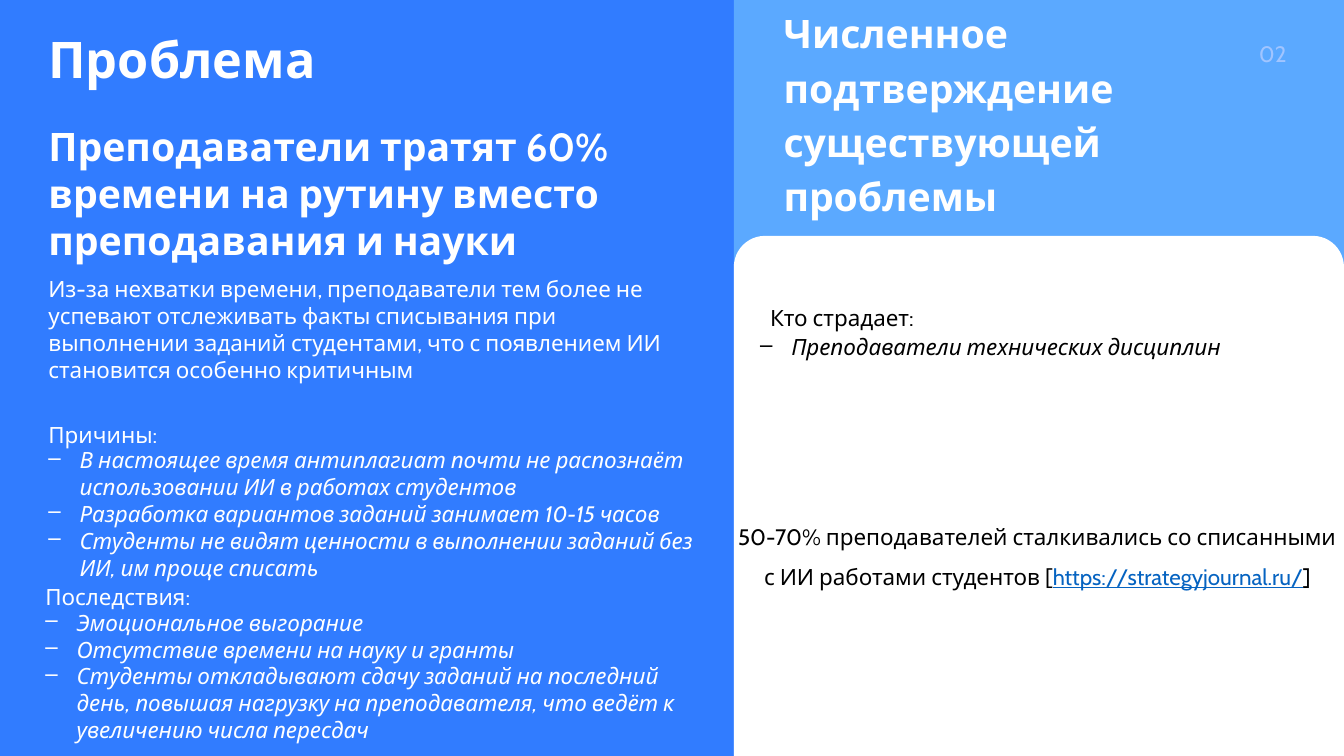
import pptx
import pptx.util
import pptx.dml.color
import pptx.enum.shapes
import pptx.enum.text
import pptx.oxml
import pptx.oxml.ns

WIDE, HIGH = pptx.util.Inches(13.33), pptx.util.Inches(7.5)
WHITE, BLACK, BLUE, SKY = "FFFFFF", "000000", "317CFF", "5BA9FF"
PALE, LINK = "A1C5FF", "0563C1"
LEFT, LOW, SPLIT, SPAN = 3.6, 3.38, 54.6, 48.6
KIND = pptx.enum.shapes.MSO_SHAPE
ALIGN = pptx.enum.text.PP_ALIGN
MID = pptx.enum.text.MSO_ANCHOR.MIDDLE
TOP = pptx.enum.text.MSO_ANCHOR.TOP


def tint(hue):
    return pptx.dml.color.RGBColor.from_string(hue)


def area(x, y, w, h):
    return [int(side * part / 100)
            for side, part in zip((WIDE, HIGH, WIDE, HIGH), (x, y, w, h))]


def panel(slide, kind, box, hue):
    shape = slide.shapes.add_shape(kind, *area(*box))
    shape.shadow.inherit = False
    shape.fill.solid()
    shape.fill.fore_color.rgb = tint(hue)
    shape.line.fill.background()
    return shape


def style(run, size, hue, bold=False, slant=False):
    font = run.font
    font.name, font.size = "Cabin", pptx.util.Pt(size)
    font.bold, font.italic = bold, slant
    font.color.rgb = tint(hue)


def dash(para):
    props = para._p.get_or_add_pPr()
    inset = pptx.util.Inches(0.31)
    props.set("marL", str(inset))
    props.set("indent", str(-inset))
    mark = pptx.oxml.parse_xml(
        f'<a:buChar {pptx.oxml.ns.nsdecls("a")} char="–"/>')
    props.append(mark)


def frame(shape, anchor, pad=0):
    body = shape.text_frame
    body.word_wrap = True
    body.auto_size = pptx.enum.text.MSO_AUTO_SIZE.NONE
    body.vertical_anchor = anchor
    body.margin_left = body.margin_right = pptx.util.Inches(pad)
    body.margin_top = body.margin_bottom = pptx.util.Inches(pad / 2)
    return body


def label(slide, box, text, hue=WHITE, size=16, bold=False, anchor=MID,
          gap=None, align=ALIGN.LEFT, pad=0):
    body = frame(slide.shapes.add_textbox(*area(*box)), anchor, pad)
    body.text = text
    para = body.paragraphs[0]
    para.alignment = align
    if gap:
        para.line_spacing = gap
    style(para.runs[0], size, hue, bold)
    return para


def points(slide, box, items, hue=WHITE, anchor=MID):
    body = frame(slide.shapes.add_textbox(*area(*box)), anchor)
    body.text = "\n".join(items)
    for para in body.paragraphs:
        dash(para)
        style(para.runs[0], 16, hue, slant=True)


def head(slide, box, text):
    title = slide.shapes.title
    title.left, title.top, title.width, title.height = area(*box)
    body = frame(title, MID)
    body.text = text
    para = body.paragraphs[0]
    para.alignment = ALIGN.LEFT
    style(para.runs[0], 36, WHITE, bold=True)


def cite(para, link, tail):
    for text, hue in ((link, LINK), (tail, BLACK)):
        run = para.add_run()
        run.text = text
        style(run, 16, hue)
        run.font.underline = hue == LINK


def main():
    deck = pptx.Presentation()
    deck.slide_width, deck.slide_height = WIDE, HIGH
    slide = deck.slides.add_slide(deck.slide_layouts[5])
    back = slide.background.fill
    back.solid()
    back.fore_color.rgb = tint(BLUE)

    side = 100 - SPLIT
    panel(slide, KIND.RECTANGLE, (SPLIT, 0, side, 100), SKY)
    card = panel(slide, KIND.ROUND_2_SAME_RECTANGLE,
                 (SPLIT, 31.2, side, 68.8), WHITE)
    card.adjustments[0] = 0.06
    card.adjustments[1] = 0

    head(slide, (LEFT, 4.4, 44, 6.67), "Проблема")
    label(slide, (LEFT, 16.13, 45.9, 7.73),
          "Преподаватели тратят 60% времени на рутину вместо "
          "преподавания и науки", size=28, bold=True, anchor=TOP)
    label(slide, (LEFT, 36.4, 45.9, 20.67),
          "Из-за нехватки времени, преподаватели тем более не успевают "
          "отслеживать факты списывания при выполнении заданий студентами, "
          "что с появлением ИИ становится особенно критичным", anchor=TOP)
    label(slide, (LEFT, 52.8, SPAN, 9.47), "Причины:")
    points(slide, (LEFT, 59.33, SPAN, 17.2), (
        "В настоящее время антиплагиат почти не распознаёт "
        "использовании ИИ в работах студентов",
        "Разработка вариантов заданий занимает 10-15 часов",
        "Студенты не видят ценности в выполнении заданий без ИИ, "
        "им проще списать"))
    label(slide, (LOW, 73.33, SPAN, 9.47), "Последствия:", gap=1.5)
    points(slide, (LOW, 80.53, SPAN, 17.87), (
        "Эмоциональное выгорание",
        "Отсутствие времени на науку и гранты",
        "Студенты откладывают сдачу заданий на последний день, повышая "
        "нагрузку на преподавателя, что ведёт к увеличению числа пересдач"),
        anchor=TOP)

    label(slide, (58.3, 9.33, 39.3, 10.67),
          "Численное подтверждение существующей проблемы",
          size=28, bold=True, gap=1.15)
    label(slide, (92.42, 4.67, 4.05, 4.93), "02", PALE,
          anchor=TOP, align=ALIGN.RIGHT, pad=0.1)
    label(slide, (57.3, 36.4, 42, 9.47), "Кто страдает:", BLACK, gap=1.5)
    points(slide, (56.56, 44.13, 42, 3.6),
           ("Преподаватели технических дисциплин",), BLACK, TOP)
    fact = label(slide, (SPLIT, 53.33, 45.16, 38.8),
                 "50-70% преподавателей сталкивались со списанными с ИИ "
                 "работами студентов [", BLACK, gap=1.5, align=ALIGN.CENTER)
    cite(fact, "https://strategyjournal.ru/", "]")
    deck.save("out.pptx")


if __name__ == "__main__":
    main()
